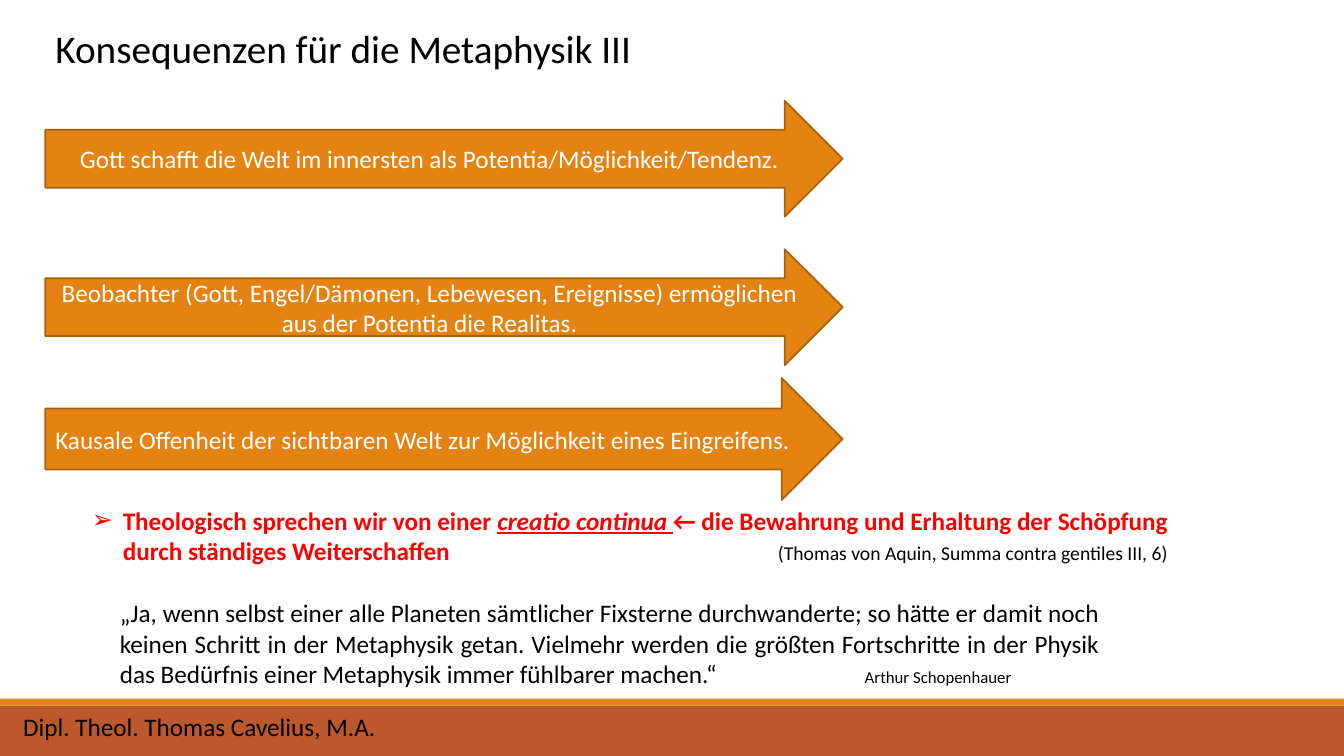
from lxml.etree import SubElement
from pptx import Presentation
from pptx.dml.color import RGBColor
from pptx.enum.shapes import MSO_SHAPE
from pptx.enum.text import MSO_ANCHOR, MSO_AUTO_SIZE, PP_ALIGN
from pptx.oxml.ns import qn
from pptx.util import Pt

BLACK = RGBColor(0x00, 0x00, 0x00)
WHITE = RGBColor(0xFF, 0xFF, 0xFF)
RED = RGBColor(0xFF, 0x00, 0x00)
ORANGE = RGBColor(0xE4, 0x83, 0x12)
DARK_ORANGE = RGBColor(0xA9, 0x61, 0x0D)
RUST = RGBColor(0xBD, 0x58, 0x2C)


def add_run(paragraph, text, size=18, color=BLACK, bold=False, italic=False, underline=False):
    """Append formatted text to a paragraph."""
    run = paragraph.add_run()
    run.text = text
    font = run.font
    font.name = "Calibri"
    font.size = Pt(size)
    font.color.rgb = color
    font.bold, font.italic, font.underline = bold, italic, underline


class SlideBuilder:
    """Hold the slide and its style, and add each kind of element."""

    def __init__(self, slide):
        self.slide = slide

    def place(self, shape, left, top, width, height):
        """Set the position and size of a shape."""
        shape.left, shape.top = Pt(left), Pt(top)
        shape.width, shape.height = Pt(width), Pt(height)

    def prepare(self, shape, align=PP_ALIGN.LEFT, anchor=MSO_ANCHOR.TOP):
        """Set up the text frame of a shape and return its first paragraph."""
        frame = shape.text_frame
        frame.word_wrap = True
        frame.auto_size = MSO_AUTO_SIZE.NONE
        frame.vertical_anchor = anchor
        paragraph = frame.paragraphs[0]
        paragraph.alignment = align
        paragraph.space_before = Pt(0)
        return paragraph

    def title(self, text, *box):
        """Fill the title placeholder."""
        shape = self.slide.shapes.title
        self.place(shape, *box)
        add_run(self.prepare(shape), text, size=28)

    def bullet(self, runs, *box, indent=51, hanging=22):
        """Fill the body placeholder with one bulleted paragraph."""
        shape = self.slide.placeholders[1]
        self.place(shape, *box)
        paragraph = self.prepare(shape)
        properties = paragraph._p.get_or_add_pPr()
        properties.set("marL", str(Pt(indent)))
        properties.set("indent", str(-Pt(hanging)))
        SubElement(properties, qn("a:buChar")).set("char", "➢")
        for text, style in runs:
            add_run(paragraph, text, color=RED, bold=True, **style)

    def text(self, text, *box, size=18, align=PP_ALIGN.LEFT):
        """Add a text box."""
        shape = self.slide.shapes.add_textbox(*map(Pt, box))
        add_run(self.prepare(shape, align), text, size=size)

    def shape(self, kind, fill, *box):
        """Add a filled preset shape without an outline."""
        shape = self.slide.shapes.add_shape(kind, *map(Pt, box))
        shape.shadow.inherit = False
        shape.fill.solid()
        shape.fill.fore_color.rgb = fill
        shape.line.fill.background()
        return shape

    def arrow(self, text, top, height, align):
        """Add an outlined block arrow with a statement."""
        shape = self.shape(MSO_SHAPE.RIGHT_ARROW, ORANGE, 32.4, top, 569.5, height)
        shape.line.color.rgb = DARK_ORANGE
        shape.line.width = Pt(1.25)
        add_run(self.prepare(shape, align, MSO_ANCHOR.MIDDLE), text, color=WHITE)


def main():
    """Build and save the slide."""
    presentation = Presentation()
    presentation.slide_width, presentation.slide_height = Pt(960), Pt(540)
    builder = SlideBuilder(presentation.slides.add_slide(presentation.slide_layouts[1]))

    builder.shape(MSO_SHAPE.RECTANGLE, RUST, 0, 504, 960, 36)
    builder.shape(MSO_SHAPE.RECTANGLE, ORANGE, 0, 499, 960, 5)
    builder.text("Dipl. Theol. Thomas Cavelius, M.A.", 9.4, 504.7, 271, 29)

    builder.title("Konsequenzen für die Metaphysik III", 32.4, 13.7, 448, 41)
    arrows = (
        ("Gott schafft die Welt im innersten als Potentia/Möglichkeit/Tendenz.",
         72, 82.8, PP_ALIGN.CENTER),
        ("Beobachter (Gott, Engel/Dämonen, Lebewesen, Ereignisse) ermöglichen "
         "aus der Potentia die Realitas.", 178, 82.8, PP_ALIGN.CENTER),
        ("Kausale Offenheit der sichtbaren Welt zur Möglichkeit eines Eingreifens.",
         270, 87.1, PP_ALIGN.LEFT),
    )
    for text, top, height, align in arrows:
        builder.arrow(text, top, height, align)

    builder.bullet(
        (("Theologisch sprechen wir von einer ", {}),
         ("creatio continua ", {"italic": True, "underline": True}),
         ("← die Bewahrung und Erhaltung der Schöpfung durch ständiges Weiterschaffen", {})),
        29.5, 357.1, 815, 51)
    builder.text("(Thomas von Aquin, Summa contra gentiles III, 6)",
                 530, 382.9, 311.5, 25, size=14, align=PP_ALIGN.RIGHT)

    builder.text("„Ja, wenn selbst einer alle Planeten sämtlicher Fixsterne durchwanderte; "
                 "so hätte er damit noch keinen Schritt in der Metaphysik getan. Vielmehr "
                 "werden die größten Fortschritte in der Physik das Bedürfnis einer "
                 "Metaphysik immer fühlbarer machen.“",
                 78.5, 423.4, 714.2, 72.7, align=PP_ALIGN.JUSTIFY)
    builder.text("Arthur Schopenhauer", 610.6, 473, 130, 22, size=12)

    presentation.save("out.pptx")


if __name__ == "__main__":
    main()
